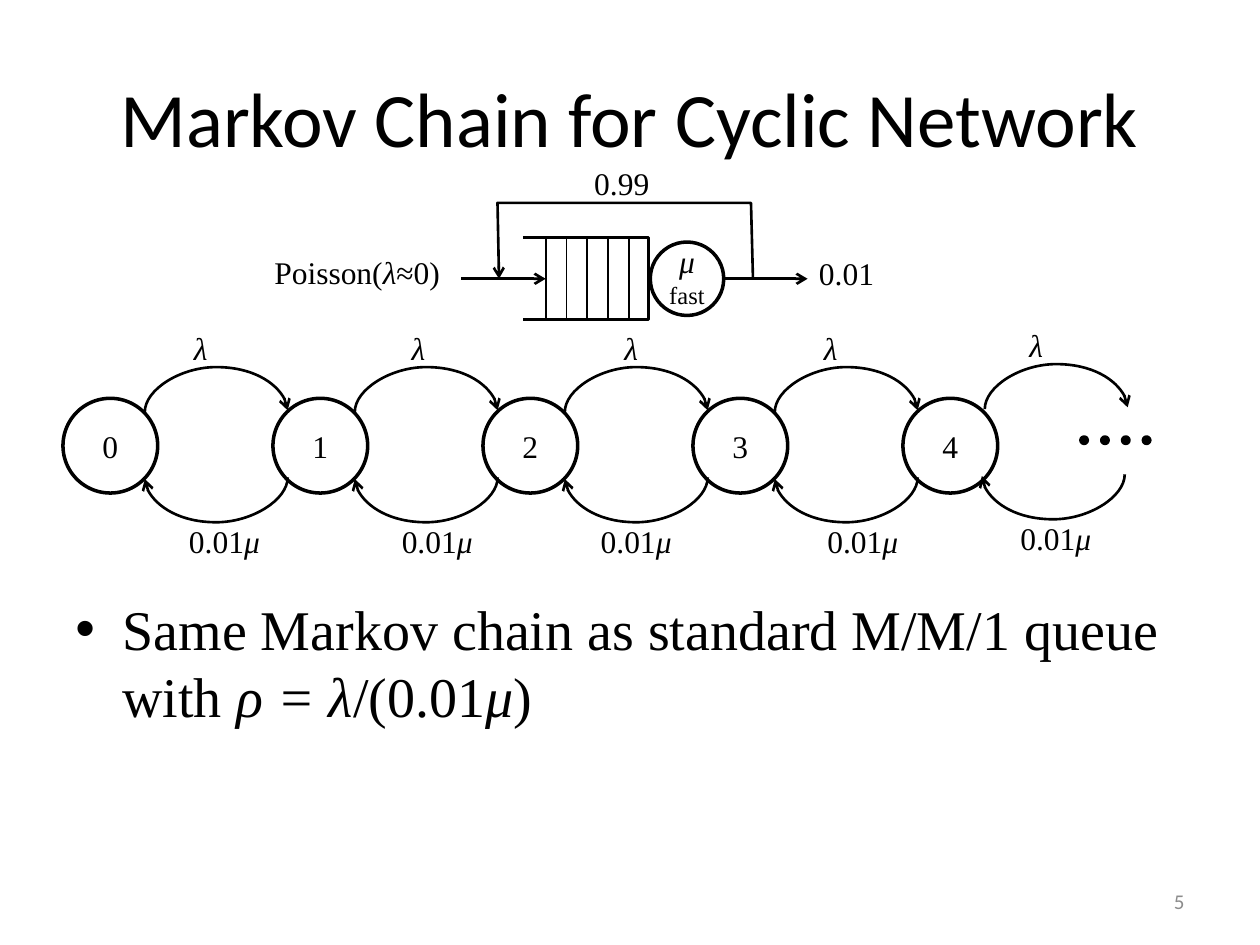
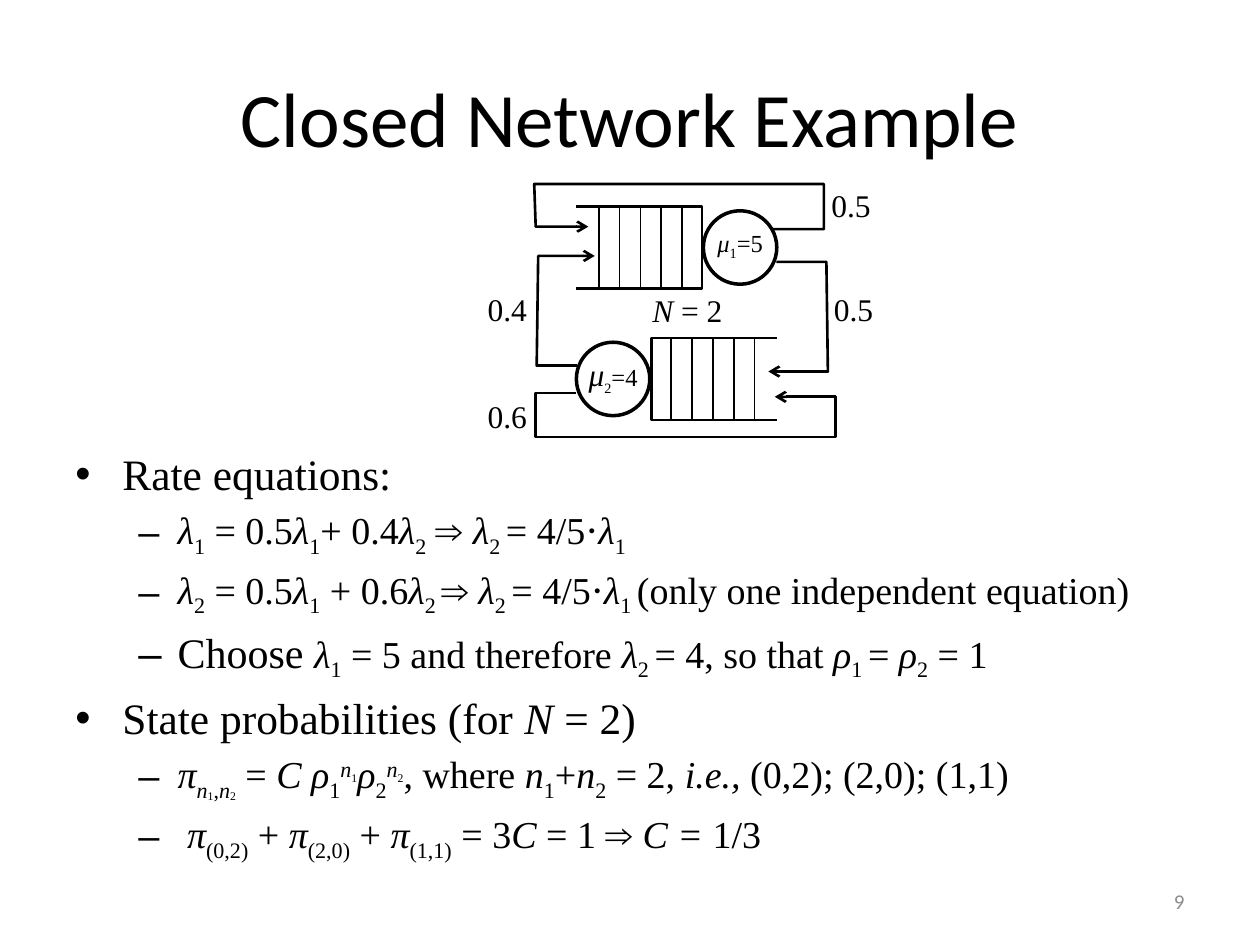
import itertools
from dataclasses import dataclass

import pptx
import pptx.util
import pptx.dml.color
import pptx.enum.shapes
import pptx.enum.text
import pptx.oxml.ns
from lxml import etree

Cm, Pt = pptx.util.Cm, pptx.util.Pt
Shape = pptx.enum.shapes.MSO_SHAPE
Line = pptx.enum.shapes.MSO_CONNECTOR
Align = pptx.enum.text.PP_ALIGN
Anchor = pptx.enum.text.MSO_ANCHOR
qn = pptx.oxml.ns.qn


@dataclass(frozen=True)
class Theme:
    ink: str = "000000"
    paper: str = "FFFFFF"
    muted: str = "8C8C8C"
    heading_font: str = "Calibri"
    body_font: str = "Times New Roman"
    title: float = 44
    body: float = 32
    section: float = 24.8
    lead: float = 24
    equation: float = 21.7
    label: float = 18
    note: float = 14
    number: float = 12
    tiny: float = 11.6
    thin: float = 1
    medium: float = 1.5
    thick: float = 2


T = Theme()
SERVER = 1.48        # diameter of a server circle
QUEUE = (2.54, 1.65)  # length and height of a queue
SLOT = 0.42          # width of one place in a queue


def rgb(code):
    return pptx.dml.color.RGBColor.from_string(code)


def child(parent, tag, **attributes):
    return etree.SubElement(parent, qn(tag), attributes)


def styled_pieces(markup):
    """Split markup: *italic*, {subscript}, [superscript], ~tiny index~."""
    italic = tiny = False
    base = 0
    marked = []
    for ch in markup:
        if ch == "*":
            italic = not italic
        elif ch == "~":
            tiny = not tiny
        elif ch in "{[}]":
            base = {"{": -25, "[": 30}.get(ch, 0)
        else:
            marked.append((ch, (italic, tiny, base)))
    for style, group in itertools.groupby(marked, key=lambda m: m[1]):
        yield "".join(m[0] for m in group), style


class Deck:
    def __init__(self, theme):
        self.theme = theme
        self.prs = pptx.Presentation()
        self.prs.slide_width, self.prs.slide_height = Cm(25.4), Cm(19.05)
        self.s = None

    def slide(self, title, number):
        t = self.theme
        self.s = self.prs.slides.add_slide(self.prs.slide_layouts[6])
        self.text(1.27, 0.76, 22.86, 3.18, title, t.title, t.heading_font,
                  align=Align.CENTER, anchor=Anchor.MIDDLE)
        self.text(18.21, 17.65, 5.92, 1.02, number, t.number, t.heading_font,
                  t.muted, Align.RIGHT, Anchor.MIDDLE)

    # Text
    def add_runs(self, p, markup, size, font=None, color=None):
        for words, (italic, tiny, base) in styled_pieces(markup):
            r = p.add_run()
            r.text = words
            r.font.name = font or self.theme.body_font
            r.font.size = Pt(self.theme.tiny if tiny else size)
            r.font.italic = italic
            r.font.color.rgb = rgb(color or self.theme.ink)
            if base:
                shift = -60 if tiny and base < 0 else base
                r._r.get_or_add_rPr().set("baseline", str(shift * 1000))

    def text(self, x, y, w, h, markup, size, font=None, color=None,
             align=Align.LEFT, anchor=Anchor.TOP):
        tf = self.s.shapes.add_textbox(Cm(x), Cm(y), Cm(w), Cm(h)).text_frame
        tf.word_wrap = True
        tf.vertical_anchor = anchor
        p = tf.paragraphs[0]
        p.alignment = align
        self.add_runs(p, markup, size, font, color)

    def label(self, x, y, markup, w=2.1):
        self.text(x, y, w, 1.02, markup, self.theme.label)

    def bullets(self, x, y, w, h, items):
        """Each item is a level and its (markup, size) parts."""
        tf = self.s.shapes.add_textbox(Cm(x), Cm(y), Cm(w), Cm(h)).text_frame
        tf.word_wrap = True
        for i, (level, *parts) in enumerate(items):
            p = tf.add_paragraph() if i else tf.paragraphs[0]
            mark, left, hang = (("•", 0.95, 0.95), ("–", 2.06, 0.79))[level]
            p.level = level
            p.space_before = Pt(round(parts[0][1] * 0.2, 1))
            pPr = p._p.get_or_add_pPr()
            pPr.set("marL", str(Cm(left)))
            pPr.set("indent", str(-Cm(hang)))
            child(pPr, "a:buFont", typeface="Arial")
            child(pPr, "a:buChar", char=mark)
            for markup, size in parts:
                self.add_runs(p, markup, size)

    # Lines and shapes
    def stroke(self, sp, width, arrow=False):
        sp.line.color.rgb = rgb(self.theme.ink)
        sp.line.width = Pt(width)
        if arrow:
            ln = sp._element.spPr.find(qn("a:ln"))
            child(ln, "a:tailEnd", type="arrow")

    def connector(self, kind, start, end, width, arrow):
        c = self.s.shapes.add_connector(kind, *start, *end)
        self.stroke(c, width, arrow)
        child(c._element.spPr, "a:effectLst")
        return c

    def line(self, x1, y1, x2, y2, width=None, arrow=False):
        return self.connector(Line.STRAIGHT, (Cm(x1), Cm(y1)), (Cm(x2), Cm(y2)),
                              width or self.theme.medium, arrow)

    def arc(self, cx, cy, span, upper):
        """A curved arrow: a flat connector, turned by a quarter."""
        half_w, half_h = Pt(1) // 2, Cm(span) // 2
        low = (Cm(cx) - half_w, Cm(cy) - half_h)
        high = (Cm(cx) + half_w, Cm(cy) + half_h)
        start, end = (high, low) if upper else (low, high)
        c = self.connector(Line.CURVE, start, end, self.theme.medium, True)
        spPr = c._element.spPr
        spPr.find(qn("a:xfrm")).set("rot", str(90 * 60000))
        guides = spPr.find(qn("a:prstGeom")).find(qn("a:avLst"))
        child(guides, "a:gd", name="adj1", fmla="val 2590800")

    def route(self, points, arrow=True):
        start, *rest = [(Cm(x), Cm(y)) for x, y in points]
        fb = self.s.shapes.build_freeform(*start)
        fb.add_line_segments(rest, close=False)
        sp = fb.convert_to_shape()
        sp.shadow.inherit = False
        sp.fill.background()
        self.stroke(sp, self.theme.medium, arrow)

    def circle(self, x, y, d, lines=(), fill=None, top=0.13):
        """Each line of text is a list of (markup, size) parts."""
        sp = self.s.shapes.add_shape(Shape.OVAL, Cm(x), Cm(y), Cm(d), Cm(d))
        sp.shadow.inherit = False
        if fill:
            sp.fill.solid()
            sp.fill.fore_color.rgb = rgb(fill)
        else:
            sp.fill.background()
        self.stroke(sp, self.theme.thick)
        tf = sp.text_frame
        tf.margin_left = tf.margin_right = 0
        tf.margin_top, tf.margin_bottom = Cm(top), Cm(0.13)
        tf.vertical_anchor = Anchor.MIDDLE
        for i, parts in enumerate(lines):
            p = tf.add_paragraph() if i else tf.paragraphs[0]
            p.alignment = Align.CENTER
            for markup, size in parts:
                self.add_runs(p, markup, size)

    def station(self, x, mid_y, lines, opens_left=True):
        """A queue closed at x, and its server on the closed side."""
        way = -1 if opens_left else 1
        length, height = QUEUE
        top, bottom = mid_y - height / 2, mid_y + height / 2
        mouth = x + way * length
        self.route([(mouth, top), (x, top), (x, bottom), (mouth, bottom)],
                   arrow=False)
        for k in range(1, 6):
            slot_x = x + way * (SLOT * k - 0.02)
            self.line(slot_x, top, slot_x, bottom, self.theme.thin)
        left = x + 0.03 if opens_left else x - 0.03 - SERVER
        self.circle(left, mid_y - SERVER / 2, SERVER, lines,
                    self.theme.paper, top=0)


def cyclic_network(d):
    d.slide("Markov Chain for Cyclic Network", "5")
    d.bullets(1.27, 11.86, 22.86, 5.16, [
        (0, ("Same Markov chain as standard M/M/1 queue with "
             "*ρ = λ*/(0.01*μ*)", T.body))])

    # Queue with feedback
    mid = 5.62
    d.station(13.08, mid, [[("*μ*", T.label)], [("fast", T.note)]])
    d.line(14.6, mid, 16.28, mid, arrow=True)
    d.line(9.3, mid, 11, mid, arrow=True)
    d.route([(15.18, mid), (15.14, 4.09), (10.03, 4.09), (10.06, mid)])
    d.label(11.73, 3.18, "0.99")
    d.label(16.26, 5, "0.01")
    d.label(5.28, 4.98, "Poisson(*λ*≈0)", w=4.65)

    # Birth-death chain
    pitch = 12.7 / 3
    birth_x = (3.66, 8.05, 12.34, 16.36, 20.5)
    death_x = (3.56, 7.85, 11.86, 16.43, 20.32)
    for k, (up_x, down_x) in enumerate(zip(birth_x, death_x)):
        lift = 0.06 if k == 4 else 0
        d.circle(1.27 + pitch * k, 8.03, 1.91, [[(str(k), T.label)]])
        d.arc(4.36 + pitch * k, 8.29 - lift, 2.88, upper=True)
        d.arc(4.36 + pitch * k - lift, 9.64 - lift, 2.88, upper=False)
        d.label(up_x, 6.5 - lift, "*λ*", w=1.57)
        d.label(down_x, 10.39 - lift, "0.01*μ*")
    for k in range(4):
        d.circle(21.79 + SLOT * k, 8.81, 0.13, fill=T.ink)


def closed_network(d):
    d.slide("Closed Network Example", "9")
    eq = T.equation
    d.bullets(1.27, 8.89, 24.13, 8.89, [
        (0, ("Rate equations:", T.section)),
        (1, ("*λ*{1} = 0.5*λ*{1}+ 0.4*λ*{2} ⇒ *λ*{2 }= 4/5⋅*λ*{1}", eq)),
        (1, ("*λ*{2} = 0.5*λ*{1} + 0.6*λ*{2 }⇒ *λ*{2 }= 4/5⋅*λ*{1 }"
             "(only one independent equation)", eq)),
        (1, ("Choose ", T.lead),
            ("*λ*{1} = 5 and therefore *λ*{2 }= 4, so that "
             "*ρ*{1 }= *ρ*{2} = 1", eq)),
        (0, ("State probabilities (for *N* = 2)", T.section)),
        (1, ("*π*{*n*~1~,*n*~2~} = *C ρ*{1}[*n*~1~]*ρ*{2}[*n*~2~], where "
             "*n*{1}+*n*{2} = 2, *i.e.,* (0,2); (2,0); (1,1)", eq)),
        (1, (" *π*{(0,2)} + *π*{(2,0)} + *π*{(1,1)} = 3*C* = 1 ⇒ "
             "*C = *1/3", eq)),
    ])

    # Two stations facing each other
    d.station(14.15, 4.99, [[("*μ*{1}=5", T.note)]])
    d.station(13.13, 7.64, [[("*μ*", T.label), ("{2}=4", T.note)]],
              opens_left=False)

    # Routes between the stations
    d.route([(15.65, 5.28), (16.66, 5.28), (16.69, 7.49), (15.49, 7.49)])
    d.route([(11.63, 7.37), (10.82, 7.37), (10.85, 5.16), (11.99, 5.16)])
    d.route([(11.61, 7.92), (10.8, 7.92), (10.8, 8.81), (16.84, 8.81),
             (16.84, 8), (15.62, 8)])
    d.route([(15.57, 4.62), (16.61, 4.62), (16.61, 3.71), (10.77, 3.71),
             (10.8, 4.57), (11.86, 4.57)])

    # Routing probabilities and population
    for x, y, words in ((16.51, 3.63, "0.5"), (9.58, 5.72, "0.4"),
                        (16.56, 5.72, "0.5"), (9.58, 7.87, "0.6"),
                        (12.9, 5.74, "*N *= 2")):
        d.label(x, y, words)


def main():
    d = Deck(T)
    cyclic_network(d)
    closed_network(d)
    d.prs.save("out.pptx")


if __name__ == "__main__":
    main()
